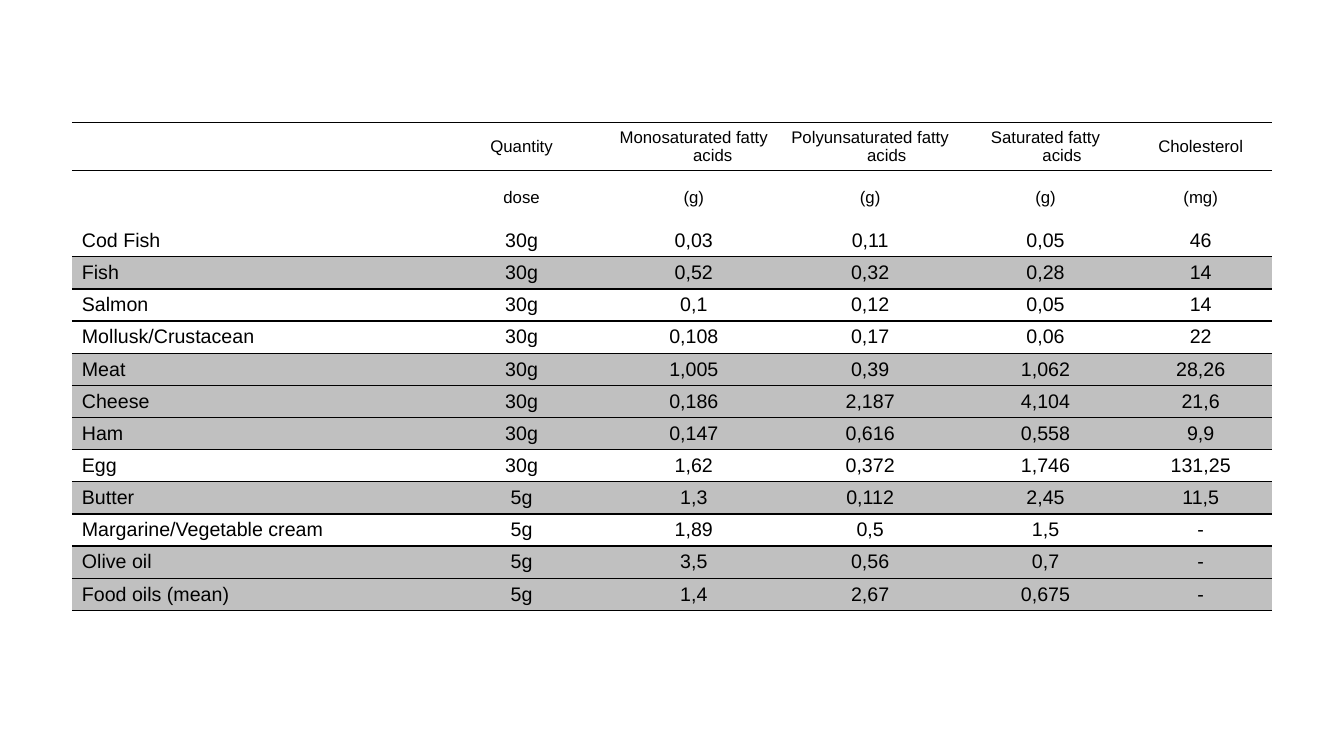
from lxml import etree
from pptx import Presentation
from pptx.dml.color import RGBColor
from pptx.enum.text import MSO_ANCHOR, PP_ALIGN
from pptx.oxml.ns import qn
from pptx.util import Cm, Pt

LEFT, CENTER = PP_ALIGN.LEFT, PP_ALIGN.CENTER
MIDDLE = MSO_ANCHOR.MIDDLE
NO_STYLE = "{2D5ABB26-0587-4C30-8999-92F81FD0307C}"

HEADERS = [
    ["", "Quantity", "Monosaturated fatty acids", "Polyunsaturated fatty acids ",
     "Saturated fatty acids ", "Cholesterol"],
    ["", "dose", "(g)", "(g)", "(g)", "(mg)"],
]
FOODS = [
    ["Cod Fish", "30g", "0,03", "0,11", "0,05", "46"],
    ["Fish", "30g", "0,52", "0,32", "0,28", "14"],
    ["Salmon", "30g", "0,1", "0,12", "0,05", "14"],
    ["Mollusk/Crustacean", "30g", "0,108", "0,17", "0,06", "22"],
    ["Meat", "30g", "1,005", "0,39", "1,062", "28,26"],
    ["Cheese", "30g", "0,186", "2,187", "4,104", "21,6"],
    ["Ham", "30g", "0,147", "0,616", "0,558", "9,9"],
    ["Egg", "30g", "1,62", "0,372", "1,746", "131,25"],
    ["Butter", "5g", "1,3", "0,112", "2,45", "11,5"],
    ["Margarine/Vegetable cream", "5g", "1,89", "0,5", "1,5", "-"],
    ["Olive oil", "5g", "3,5", "0,56", "0,7", "-"],
    ["Food oils (mean)", "5g", "1,4", "2,67", "0,675", "-"],
]
SHADED = {"Fish", "Meat", "Cheese", "Ham", "Butter", "Olive oil", "Food oils (mean)"}
COLUMN_WIDTHS = [9.14, 4.39, 4.29, 4.6, 4.24, 3.58]
ROW_HEIGHTS = [1.21, 1.36] + [0.81] * len(FOODS)


def rgb(value):
    return RGBColor.from_string(value)


class SlideBuilder:
    font = "Arial"
    ink = "000000"
    shade = "C0C0C0"
    hanging = Cm(0.95)

    def __init__(self, prs):
        self.s = prs.slides.add_slide(prs.slide_layouts[6])

    def border(self, cell, side, visible):
        ln = etree.SubElement(cell._tc.get_or_add_tcPr(), qn(f"a:ln{side}"), w=str(Pt(1)))
        if visible:
            fill = etree.SubElement(ln, qn("a:solidFill"))
            etree.SubElement(fill, qn("a:srgbClr"), val=self.ink)
        else:
            etree.SubElement(ln, qn("a:noFill"))

    def cell(self, cell, text, size, align, shaded, top, bottom):
        for side, visible in (("L", False), ("R", False), ("T", top), ("B", bottom)):
            self.border(cell, side, visible)
        if shaded:
            cell.fill.solid()
            cell.fill.fore_color.rgb = rgb(self.shade)
        else:
            cell.fill.background()
        cell.vertical_anchor = MIDDLE
        cell.text = text
        p = cell.text_frame.paragraphs[0]
        p.alignment = align
        p.font.name = self.font
        p.font.size = Pt(size)
        p.font.color.rgb = rgb(self.ink)
        pPr = p._p.get_or_add_pPr()
        pPr.set("marL", str(self.hanging))
        pPr.set("indent", str(-self.hanging))

    def table(self, left, top, widths, heights, headers, body):
        rows = headers + body
        frame = self.s.shapes.add_table(len(rows), len(widths), Cm(left), Cm(top),
                                        Cm(sum(widths)), Cm(sum(heights)))
        table = frame.table
        table.first_row = table.horz_banding = False
        table._tbl.tblPr.find(qn("a:tableStyleId")).text = NO_STYLE
        for column, width in zip(table.columns, widths):
            column.width = Cm(width)
        units = len(headers) - 1
        for i, (row, height) in enumerate(zip(rows, heights)):
            table.rows[i].height = Cm(height)
            for j, text in enumerate(row):
                self.cell(table.cell(i, j), text,
                          size=12 if i <= units else 14,
                          align=CENTER if j else LEFT,
                          shaded=row[0] in SHADED,
                          top=i != units + 1,
                          bottom=i != units)


def main():
    prs = Presentation()
    prs.slide_width, prs.slide_height = Cm(33.87), Cm(19.05)
    slide = SlideBuilder(prs)
    slide.table(1.81, 3.09, COLUMN_WIDTHS, ROW_HEIGHTS, HEADERS, FOODS)
    prs.save("out.pptx")


if __name__ == "__main__":
    main()
